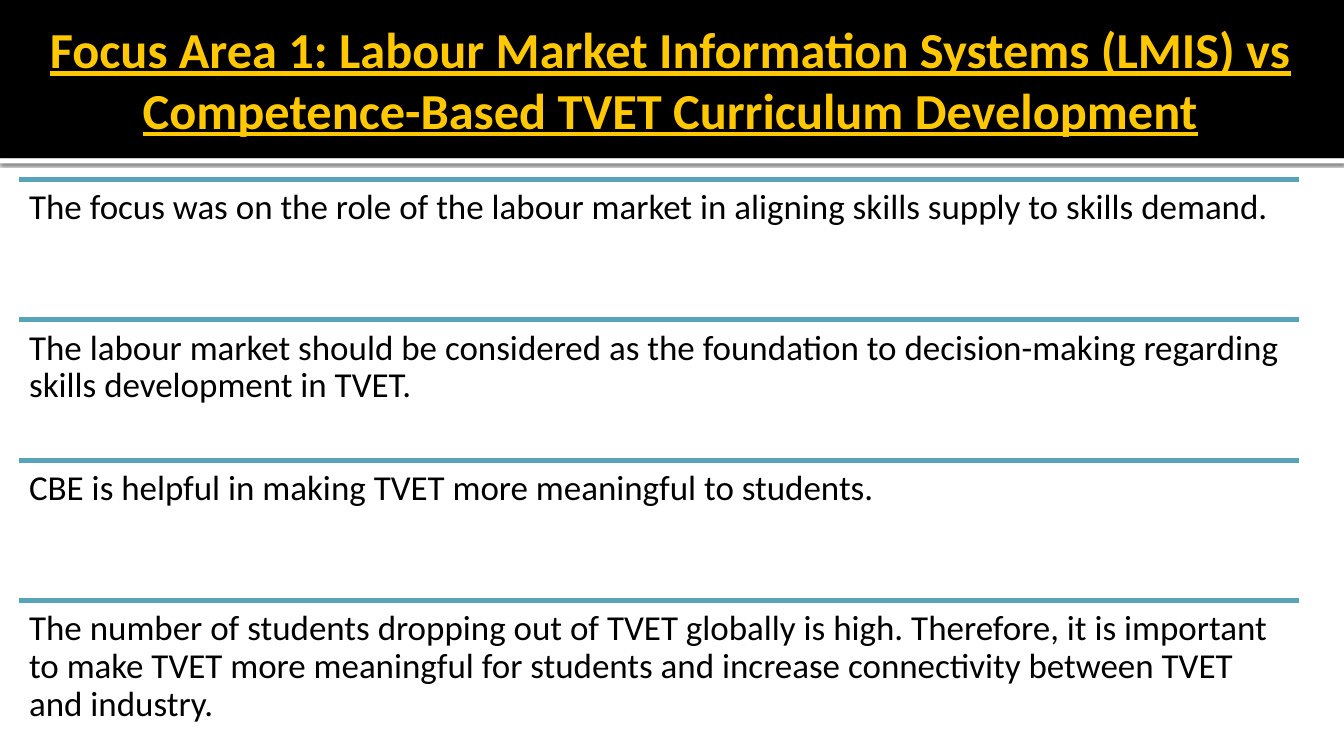
from lxml import etree
from pptx import Presentation
from pptx.dml.color import RGBColor
from pptx.enum.shapes import MSO_CONNECTOR, MSO_SHAPE
from pptx.enum.text import MSO_ANCHOR, MSO_AUTO_SIZE, PP_ALIGN
from pptx.oxml import parse_xml
from pptx.oxml.ns import nsdecls, qn
from pptx.util import Inches, Pt

RECTANGLE = MSO_SHAPE.RECTANGLE
STRAIGHT = MSO_CONNECTOR.STRAIGHT
TOP, MIDDLE = MSO_ANCHOR.TOP, MSO_ANCHOR.MIDDLE
CENTER = PP_ALIGN.CENTER
NO_AUTOFIT = MSO_AUTO_SIZE.NONE

TITLE = (
    "Focus Area 1: Labour Market Information Systems (LMIS) vs "
    "Competence-Based TVET Curriculum Development"
)
POINTS = [
    "The focus was on the role of the labour market in aligning skills supply to skills demand.",
    "The labour market should be considered as the foundation to decision-making regarding "
    "skills development in TVET.",
    "CBE is helpful in making TVET more meaningful to students.",
    "The number of students dropping out of TVET globally is high. Therefore, it is important "
    "to make TVET more meaningful for students and increase connectivity between TVET and industry.",
]
COLORS = {
    "band": "000000",
    "edge": "FFFFFF",
    "title": "FFC800",
    "rule": "57A4B9",
    "text": "000000",
}
FONT = "Calibri"
SLIDE_WIDTH, SLIDE_HEIGHT = 13.33, 7.5
BAND_HEIGHT, EDGE_HEIGHT = 1.57, 0.05
LIST_LEFT, LIST_TOP, LIST_WIDTH = 0.19, 1.78, 12.69
ROW_HEIGHT = 1.393


def color(name):
    return RGBColor.from_string(COLORS[name])


def add_bar(slide, top, height, fill):
    bar = slide.shapes.add_shape(
        RECTANGLE, 0, Inches(top), Inches(SLIDE_WIDTH), Inches(height)
    )
    bar.shadow.inherit = False
    bar.fill.solid()
    bar.fill.fore_color.rgb = color(fill)
    bar.line.fill.background()
    return bar


def add_drop_shadow(shape):
    effects = shape._element.spPr.find(qn("a:effectLst"))
    effects.append(parse_xml(
        f'<a:outerShdw {nsdecls("a")} blurRad="{Pt(2.5)}" dist="{Pt(0.8)}" '
        'dir="5400000" algn="tl" rotWithShape="0">'
        '<a:srgbClr val="000000"><a:alpha val="60000"/></a:srgbClr></a:outerShdw>'
    ))


def set_frame(frame, anchor, left, top, right, bottom):
    frame.word_wrap = True
    frame.auto_size = NO_AUTOFIT
    frame.vertical_anchor = anchor
    frame.margin_left, frame.margin_top = Inches(left), Inches(top)
    frame.margin_right, frame.margin_bottom = Inches(right), Inches(bottom)


def set_font(paragraph, size, name):
    paragraph.font.name = FONT
    paragraph.font.size = Pt(size)
    paragraph.font.color.rgb = color(name)


def add_title(slide):
    title = slide.shapes.title
    slide.shapes._spTree.append(title._element)
    title.left, title.top = Inches(-0.09), Inches(0.15)
    title.width, title.height = Inches(13.43), Inches(1.79)
    title.text_frame.text = TITLE
    set_frame(title.text_frame, MIDDLE, 0.1, 0.05, 0.05, 0.58)
    paragraph = title.text_frame.paragraphs[0]
    paragraph.alignment = CENTER
    set_font(paragraph, 36, "title")
    paragraph.font.bold = True
    paragraph.font.underline = True


def add_point(slide, top, text):
    left, width = Inches(LIST_LEFT), Inches(LIST_WIDTH)
    rule = slide.shapes.add_connector(STRAIGHT, left, top, left + width, top)
    rule.line.color.rgb = color("rule")
    rule.line.width = Pt(3.78)
    etree.SubElement(rule._element.spPr, qn("a:effectLst"))

    box = slide.shapes.add_textbox(left, top, width, Inches(ROW_HEIGHT))
    box.text_frame.text = text
    set_frame(box.text_frame, TOP, 0.1, 0.1, 0.1, 0.1)
    paragraph = box.text_frame.paragraphs[0]
    paragraph.line_spacing = 0.9
    set_font(paragraph, 25, "text")


def main():
    presentation = Presentation()
    presentation.slide_width = Inches(SLIDE_WIDTH)
    presentation.slide_height = Inches(SLIDE_HEIGHT)
    slide = presentation.slides.add_slide(presentation.slide_layouts[5])

    add_drop_shadow(add_bar(slide, BAND_HEIGHT, EDGE_HEIGHT, "edge"))
    add_bar(slide, 0, BAND_HEIGHT, "band")
    add_title(slide)
    for row, text in enumerate(POINTS):
        add_point(slide, Inches(LIST_TOP + row * ROW_HEIGHT), text)

    presentation.save("out.pptx")


if __name__ == "__main__":
    main()
